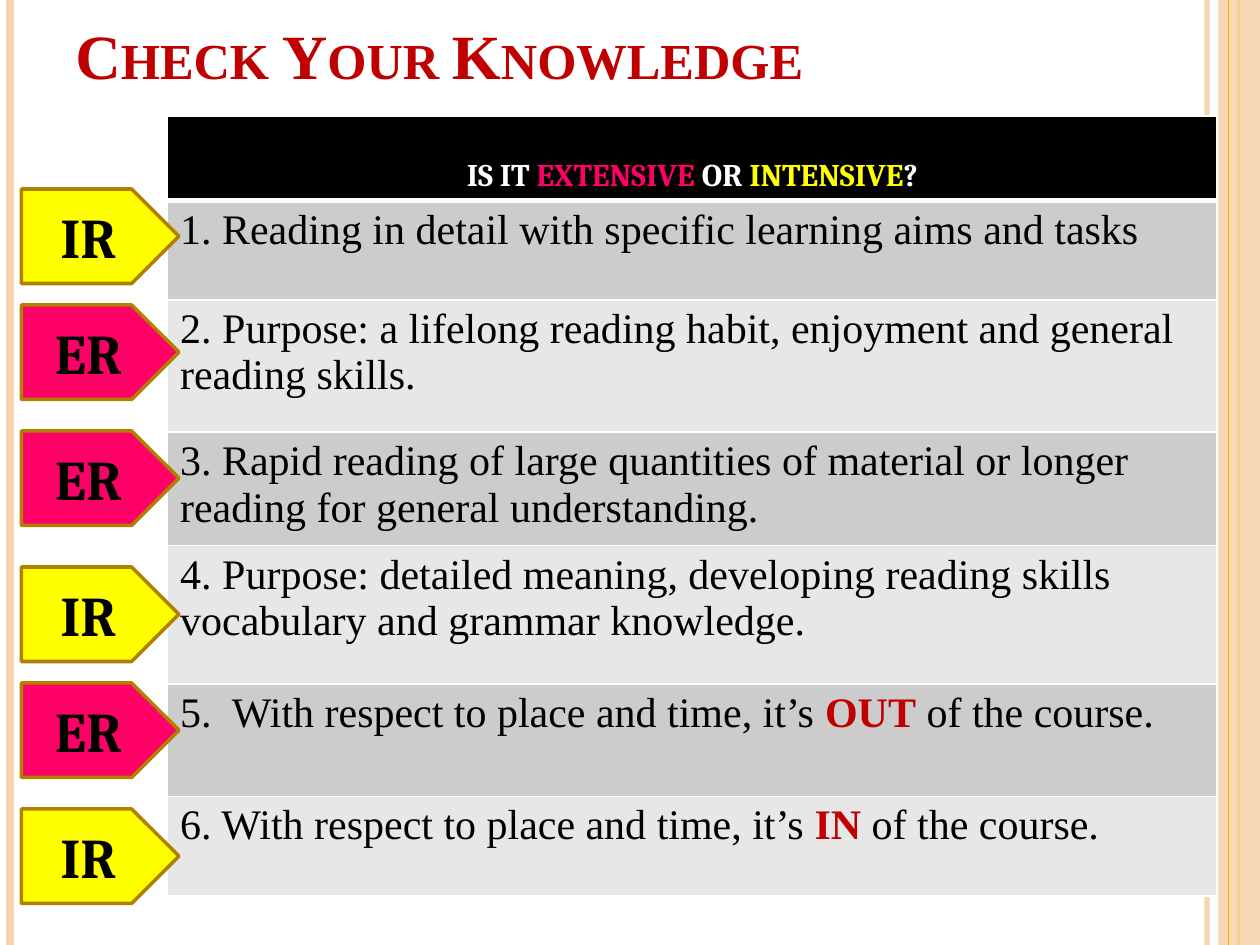
from lxml import etree
from pptx import Presentation
from pptx.dml.color import RGBColor
from pptx.enum.shapes import MSO_CONNECTOR, MSO_SHAPE
from pptx.enum.text import MSO_ANCHOR as Anchor, PP_ALIGN as Align
from pptx.oxml.ns import qn
from pptx.util import Inches, Pt

SERIF, HEADING = "Times New Roman", "Cambria"
BLACK, WHITE, RED = "000000", "FFFFFF", "C00000"
PINK, YELLOW = "FF0066", "FFFF00"
PEACH, AMBER, BROWN = "F6D3AB", "F0AD00", "B28000"
BANDS = ("CCCCCC", "E7E7E7")


def color(value):
    return RGBColor.from_string(value)


def set_alpha(element, percent):
    """Make the colour inside a fill or line element partly transparent."""
    for node in element.iter(qn("a:srgbClr")):
        etree.SubElement(node, qn("a:alpha"), val=str(percent * 1000))


def add_run(paragraph, text, size=24, font=SERIF, ink=BLACK, bold=False, small_caps=False):
    run = paragraph.add_run()
    run.text = text
    run.font.size, run.font.name, run.font.bold = Pt(size), font, bold
    run.font.color.rgb = color(ink)
    if small_caps:
        run._r.get_or_add_rPr().set("cap", "small")


class SlideBuilder:
    def __init__(self, slide):
        self.slide = slide
        self.height = 7.5

    def stripe(self, x, ink, width, alpha=None):
        line = self.slide.shapes.add_connector(
            MSO_CONNECTOR.STRAIGHT, Inches(x), 0, Inches(x), Inches(self.height))
        line.line.color.rgb = color(ink)
        line.line.width = Pt(width)
        properties = line._element.spPr
        if alpha:
            set_alpha(properties, alpha)
        etree.SubElement(properties, qn("a:effectLst"))

    def shape(self, kind, left, top, width, height, fill, line=None):
        shape = self.slide.shapes.add_shape(
            kind, Inches(left), Inches(top), Inches(width), Inches(height))
        shape.shadow.inherit = False
        shape.fill.solid()
        shape.fill.fore_color.rgb = color(fill)
        if line:
            shape.line.color.rgb = color(line)
            shape.line.width = Pt(2)
        else:
            shape.line.fill.background()
        return shape

    def band(self, left, width, fill, alpha):
        shape = self.shape(MSO_SHAPE.RECTANGLE, left, 0, width, self.height, fill)
        set_alpha(shape._element.spPr, alpha)

    def title(self, text):
        box = self.slide.shapes.add_textbox(Inches(0.5), 0, Inches(8.17), Inches(0.78))
        frame = box.text_frame
        frame.word_wrap = True
        frame.vertical_anchor = Anchor.BOTTOM
        add_run(frame.paragraphs[0], text, size=36, ink=RED, bold=True, small_caps=True)

    def tag(self, top, text, fill):
        shape = self.shape(MSO_SHAPE.PENTAGON, 0.17, top, 1.25, 0.75, fill, BROWN)
        frame = shape.text_frame
        frame.vertical_anchor = Anchor.MIDDLE
        paragraph = frame.paragraphs[0]
        paragraph.alignment = Align.CENTER
        add_run(paragraph, text, size=32, font=HEADING, bold=True)

    def cell(self, cell, parts, fill, top=1, bottom=1, **style):
        properties = cell._tc.get_or_add_tcPr()
        for side, width in (("L", 1), ("R", 1), ("T", top), ("B", bottom)):
            border = etree.SubElement(properties, qn(f"a:ln{side}"), w=str(Pt(width)))
            solid = etree.SubElement(border, qn("a:solidFill"))
            etree.SubElement(solid, qn("a:srgbClr"), val=WHITE)
        cell.fill.solid()
        cell.fill.fore_color.rgb = color(fill)
        for text, ink in parts:
            run_style = {"ink": ink, "bold": ink == RED, **style}
            add_run(cell.text_frame.paragraphs[0], text, **run_style)

    def table(self, header, rows, heights):
        table = self.slide.shapes.add_table(
            len(heights), 1, Inches(1.33), Inches(0.92),
            Inches(8.33), Inches(sum(heights))).table
        for row, height in zip(table.rows, heights):
            row.height = Inches(height)
        # Header row
        top_cell = table.cell(0, 0)
        self.cell(top_cell, header, BLACK, bottom=3, size=18, font=HEADING, bold=True)
        top_cell.vertical_anchor = Anchor.BOTTOM
        top_cell.text_frame.paragraphs[0].alignment = Align.CENTER
        # Statement rows in alternating greys
        for index, parts in enumerate(rows):
            self.cell(table.cell(index + 1, 0), parts, BANDS[index % 2],
                      top=3 if index == 0 else 1)


def main():
    presentation = Presentation()
    presentation.slide_width, presentation.slide_height = Inches(10), Inches(7.5)
    builder = SlideBuilder(presentation.slides.add_slide(presentation.slide_layouts[6]))

    # Side stripes
    builder.stripe(9.58, PEACH, 3, alpha=93)
    builder.stripe(0.08, PEACH, 4.5)
    builder.stripe(9.83, AMBER, 1.5)
    builder.band(9.67, 0.33, PEACH, alpha=87)
    builder.stripe(9.75, AMBER, 0.75)

    builder.title("Check Your Knowledge")

    # Statements
    header = [("IS IT ", WHITE), ("EXTENSIVE", PINK), (" OR ", WHITE),
              ("INTENSIVE", YELLOW), ("?", WHITE)]
    rows = [
        [("1. Reading in detail with specific learning aims and tasks", BLACK)],
        [("2. Purpose: a lifelong reading habit, enjoyment and general "
          "reading skills.", BLACK)],
        [("3. Rapid reading of large quantities of material or longer "
          "reading for general understanding.", BLACK)],
        [("4. Purpose: detailed meaning, developing reading skills "
          "vocabulary and grammar knowledge.", BLACK)],
        [("5.  With respect to place and time, it’s ", BLACK), ("OUT", RED),
         (" of the course.", BLACK)],
        [("6. With respect to place and time, it’s ", BLACK), ("IN", RED),
         (" of the course.", BLACK)],
    ]
    builder.table(header, rows, [0.67, 0.79, 1.05, 0.89, 1.1, 0.89, 0.79])

    # Answer tags
    fills = {"IR": YELLOW, "ER": PINK}
    tops = (1.5, 2.42, 3.42, 4.5, 5.42, 6.42)
    for top, answer in zip(tops, ("IR", "ER", "ER", "IR", "ER", "IR")):
        builder.tag(top, answer, fills[answer])

    presentation.save("out.pptx")


if __name__ == "__main__":
    main()
